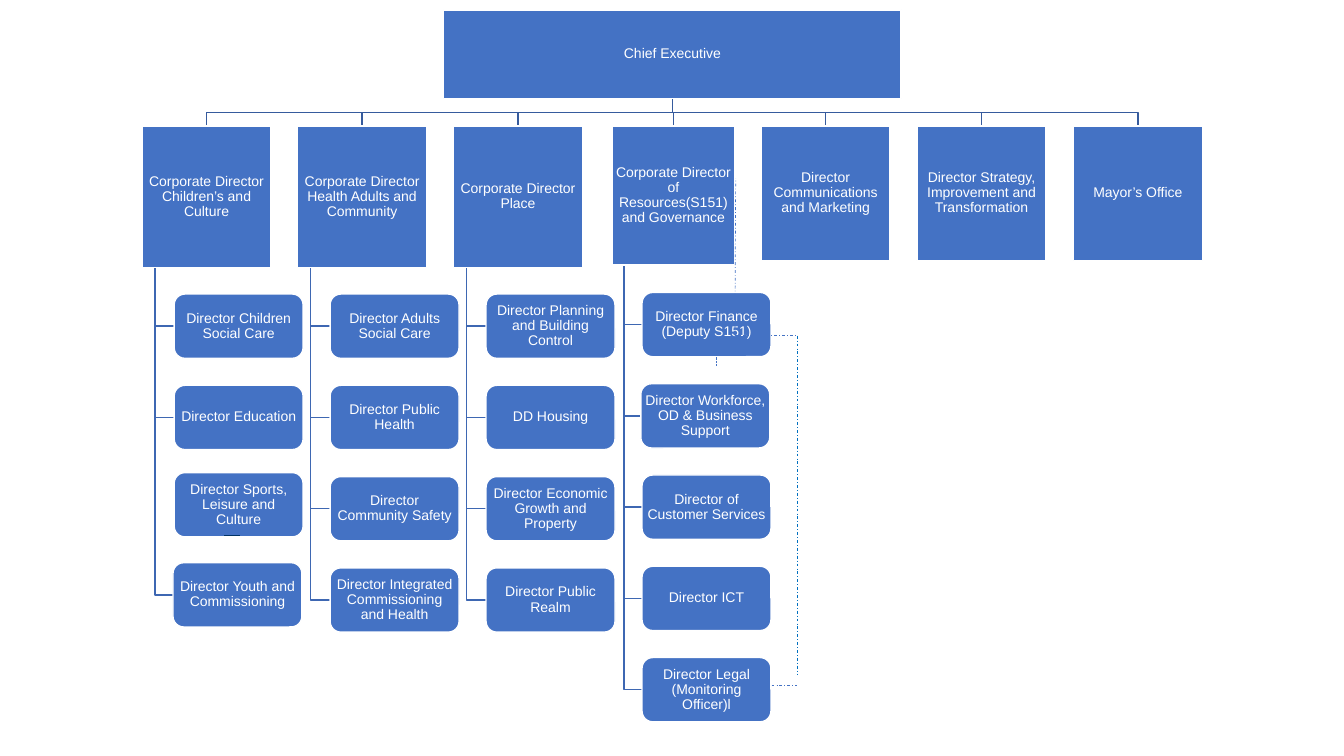
import pptx
import pptx.util
import pptx.dml.color
import pptx.enum.dml
import pptx.enum.shapes
import pptx.enum.text
import pptx.oxml.ns
import lxml.etree

Cm, Pt = pptx.util.Cm, pptx.util.Pt
RGBColor = pptx.dml.color.RGBColor
Shape = pptx.enum.shapes.MSO_SHAPE
Dash = pptx.enum.dml.MSO_LINE

BLUE = RGBColor(0x44, 0x72, 0xC4)
WHITE = RGBColor(0xFF, 0xFF, 0xFF)
TOP_LINE = RGBColor(0x36, 0x5B, 0x9D)
SIDE_LINE = RGBColor(0x3E, 0x67, 0xB2)
NAVY = RGBColor(0x00, 0x33, 0x66)
BRIGHT = RGBColor(0x00, 0x70, 0xC0)

# Content, lengths in cm
CHIEF = ("Chief Executive", 11.18, 0.25, 11.53, 2.24)

# Head: text, left, width, height; then the top of its first report
HEADS = [
    ("Corporate Director Children’s and Culture", 3.58, 3.25, 3.56, 7.41,
     ["Director Children Social Care", "Director Education",
      "Director Sports, Leisure and Culture",
      "Director Youth and Commissioning"]),
    ("Corporate Director Health Adults and Community", 7.5, 3.25, 3.56, 7.41,
     ["Director Adults Social Care", "Director Public Health",
      "Director Community Safety",
      "Director Integrated Commissioning and Health"]),
    ("Corporate Director Place", 11.43, 3.25, 3.56, 7.41,
     ["Director Planning and Building Control", "DD Housing",
      "Director Economic Growth and Property", "Director Public Realm"]),
    ("Corporate Director of Resources(S151) and Governance",
     15.42, 3.1, 3.5, 7.37,
     ["Director Finance (Deputy S151)",
      "Director Workforce, OD & Business Support",
      "Director of Customer Services", "Director ICT",
      "Director Legal (Monitoring Officer)l"]),
    ("Director Communications and Marketing", 19.18, 3.25, 3.38, 0, []),
    ("Director Strategy, Improvement and Transformation",
     23.11, 3.25, 3.38, 0, []),
    ("Mayor’s Office", 27.05, 3.25, 3.38, 0, []),
]

# Boxes set a little off the grid: (column, row) to shift right, shift down
SHIFTS = {(0, 2): (0, -0.1), (0, 3): (-0.03, -0.13), (3, 1): (-0.03, 0)}
LOOSE = {(0, 2)}  # has no branch of its own

# Links: from x, y, to x, y, colour, width, dash
LINKS = [
    (6.05, 13.49, 5.64, 13.49, NAVY, 1, None),
    (18.52, 8.46, 18.54, 4.5, BLUE, 0.5, Dash.DASH_DOT),
    (18.06, 9.22, 18.06, 8.89, BLUE, 0.5, Dash.ROUND_DOT),
    (19.05, 17.27, 20.09, 17.27, BLUE, 0.5, Dash.DASH_DOT),
    (20.09, 8.46, 20.09, 16.99, BRIGHT, 0.5, Dash.DASH_DOT),
    (18.52, 8.46, 20.09, 8.46, BLUE, 0.5, Dash.DASH_DOT),
]

HEAD_TOP, BUS = 3.18, 2.83
STAFF_LEFT, STEP_X, STEP_Y = 4.39, 3.93, 2.3
STAFF_W, STAFF_H = 3.25, 1.62
FRAME = dict(margin_left=Cm(0.03), margin_right=Cm(0.03),
             margin_top=Cm(0.03), margin_bottom=Cm(0.03), word_wrap=True,
             vertical_anchor=pptx.enum.text.MSO_ANCHOR.MIDDLE)
PARA = dict(alignment=pptx.enum.text.PP_ALIGN.CENTER,
            line_spacing=0.9, space_after=Pt(3.5))
FONT = dict(name="Arial", size=Pt(10))

deck = pptx.Presentation()
deck.slide_width, deck.slide_height = Cm(33.87), Cm(19.05)
slide = deck.slides.add_slide(deck.slide_layouts[6])
shapes = slide.shapes


def style(item, values):
    for key, value in values.items():
        setattr(item, key, value)


def draw_path(points, color):
    spots = [(Cm(x), Cm(y)) for x, y in points]
    pen = shapes.build_freeform(*spots[0])
    pen.add_line_segments(spots[1:], close=False)
    path = pen.convert_to_shape()
    path.shadow.inherit = False
    path.fill.background()
    path.line.color.rgb = color
    path.line.width = Pt(1)


def draw_box(kind, text, left, top, width, height):
    box = shapes.add_shape(kind, Cm(left), Cm(top), Cm(width), Cm(height))
    box.shadow.inherit = False
    box.fill.solid()
    box.fill.fore_color.rgb = BLUE
    box.line.color.rgb = WHITE
    box.line.width = Pt(1)
    style(box.text_frame, FRAME)
    para = box.text_frame.paragraphs[0]
    para.text = text
    style(para, PARA)
    style(para.font, FONT)
    para.font.color.rgb = WHITE


def draw_link(x1, y1, x2, y2, color, width, dash):
    link = shapes.add_connector(pptx.enum.shapes.MSO_CONNECTOR.STRAIGHT,
                                Cm(x1), Cm(y1), Cm(x2), Cm(y2))
    link.line.color.rgb = color
    link.line.width = Pt(width)
    if dash:
        link.line.dash_style = dash
    props = link._element.spPr
    lxml.etree.SubElement(props, pptx.oxml.ns.qn("a:effectLst"))


# Place every box and collect the branches between them
_, left, top, width, height = CHIEF
chief_x, chief_end = left + width / 2, top + height
boxes = [(Shape.RECTANGLE, *CHIEF)]
paths = []
for col, (name, left, width, height, first, staff) in enumerate(HEADS):
    mid = left + width / 2
    paths.append(([(chief_x, chief_end), (chief_x, BUS), (mid, BUS),
                   (mid, HEAD_TOP)], TOP_LINE))
    boxes.append((Shape.RECTANGLE, name, left, HEAD_TOP, width, height))
    trunk = left + width / 10
    for row, job in enumerate(staff):
        right, down = SHIFTS.get((col, row), (0, 0))
        x = STAFF_LEFT + col * STEP_X + right
        y = first + row * STEP_Y + down
        boxes.append((Shape.ROUNDED_RECTANGLE, job, x, y, STAFF_W, STAFF_H))
        if (col, row) not in LOOSE:
            turn = y + STAFF_H / 2
            paths.append(([(trunk, HEAD_TOP + height), (trunk, turn),
                           (x, turn)], SIDE_LINE))

# Branches lie behind the boxes, links in front
for path in paths:
    draw_path(*path)
for box in boxes:
    draw_box(*box)
for link in LINKS:
    draw_link(*link)

deck.save("out.pptx")
